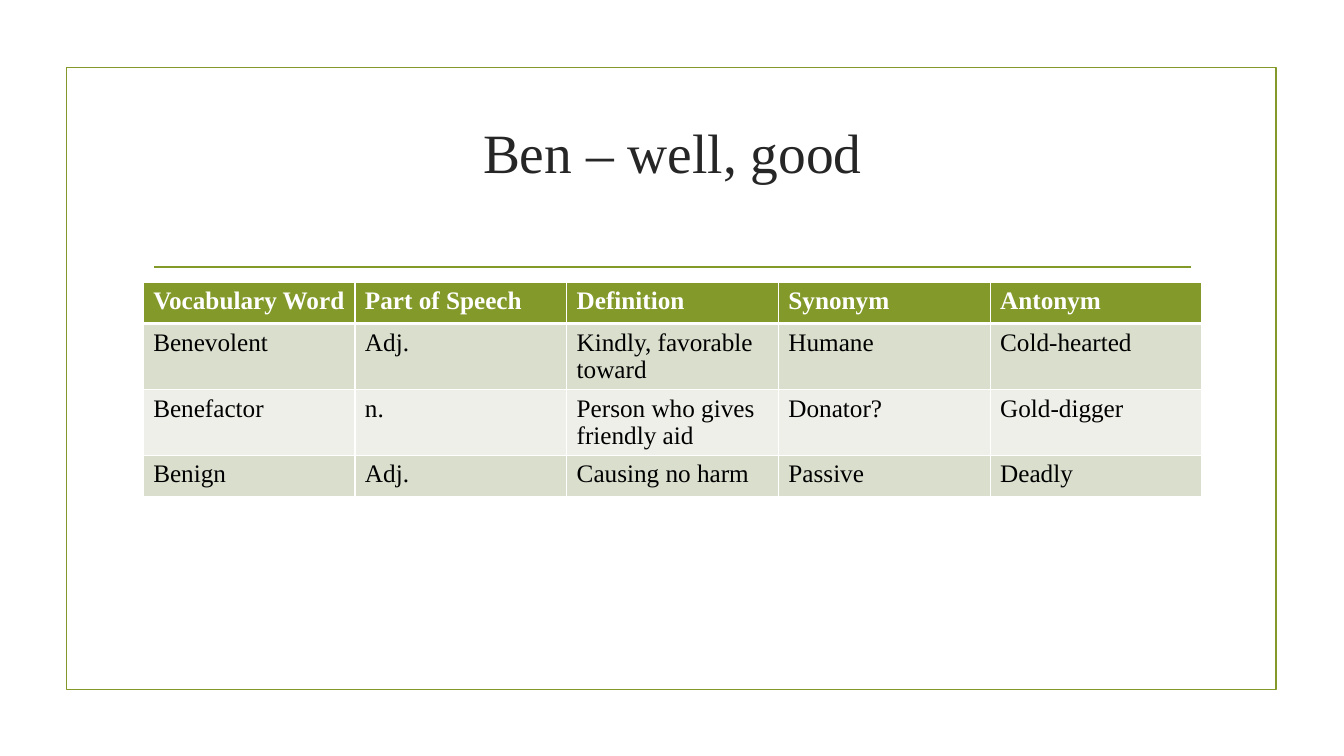
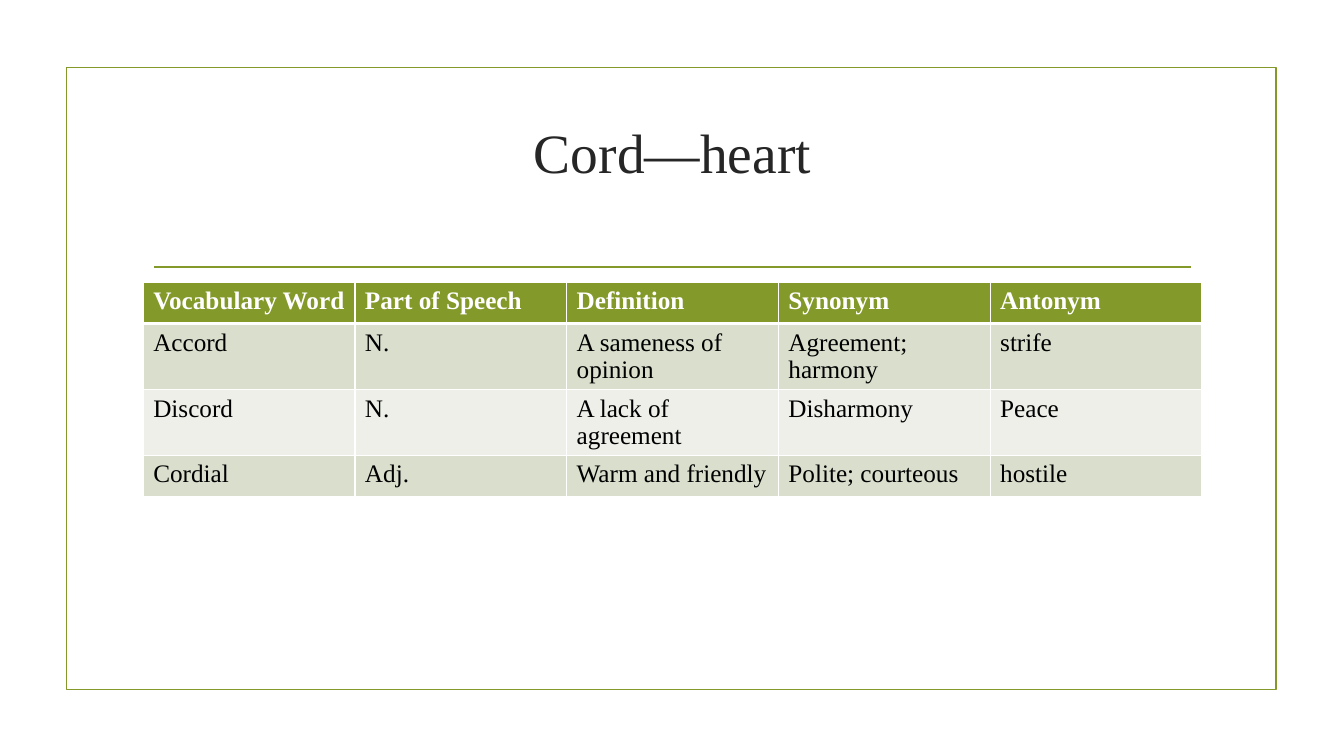
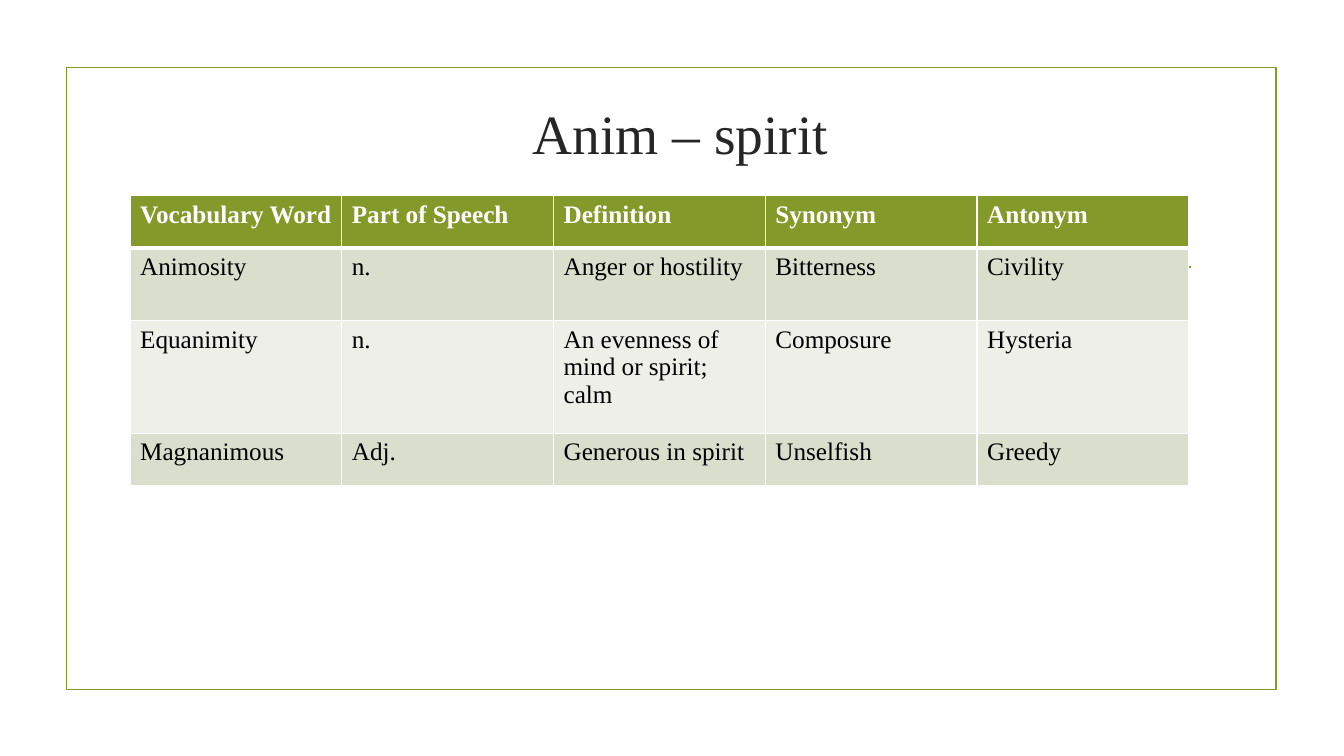
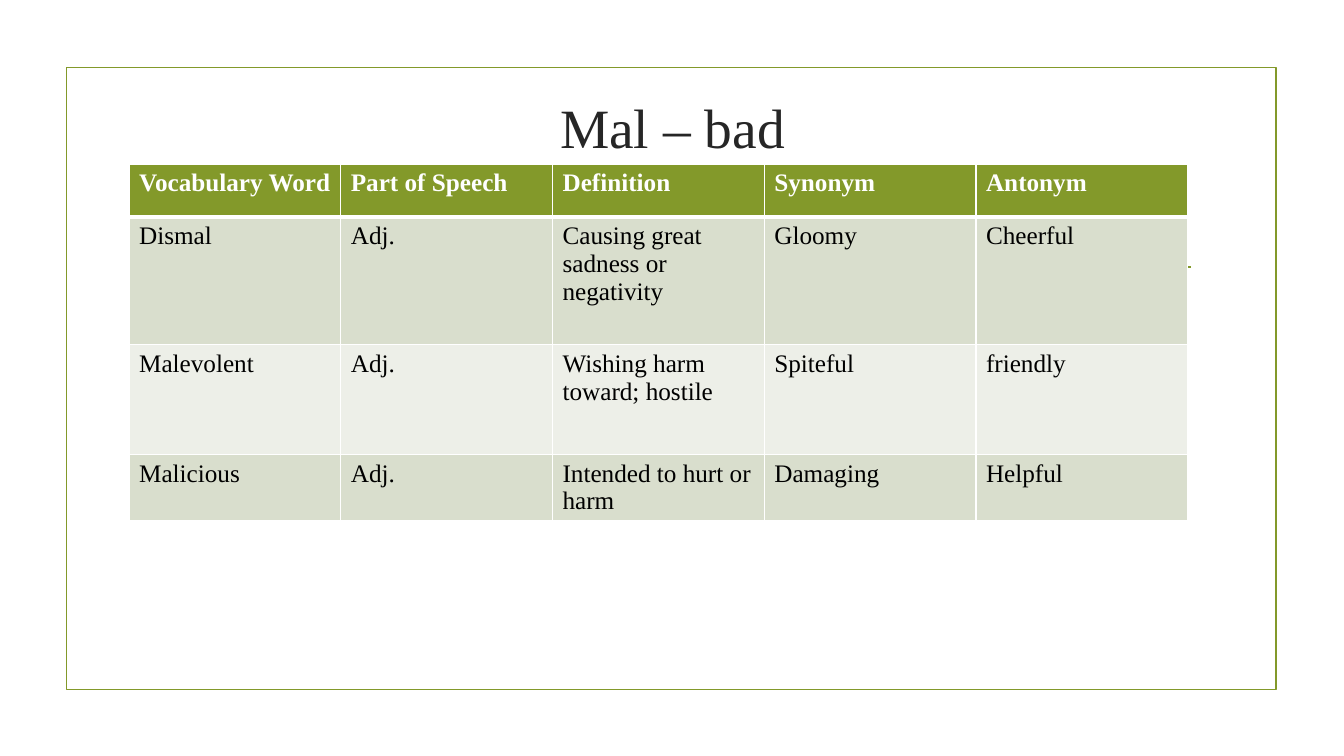
"""Build four vocabulary slides, one for each Latin root."""
import pptx
import pptx.dml.color
import pptx.enum.shapes
import pptx.enum.text
import pptx.oxml
import pptx.oxml.ns
import pptx.util

Inches = pptx.util.Inches
Pt = pptx.util.Pt

FONT = "Times New Roman"
GREEN = "83992A"
WHITE = "FFFFFF"
BLACK = "000000"
TITLE_COLOUR = "262626"
BANDS = ["D9DECD", "EDEFE8"]
COLUMN_WIDTH = 2.1
HEADINGS = ["Vocabulary Word", "Part of Speech", "Definition", "Synonym", "Antonym"]

ROOTS = [
    {
        "title": "Ben – well, good",
        "title_at": (1.42, 1.07, 10.5, 1.43),
        "table_at": (1.42, 2.8),
        "row_heights": [0.41, 0.41, 0.41, 0.41],
        "words": [
            ["Benevolent", "Adj.", "Kindly, favorable toward", "Humane", "Cold-hearted"],
            ["Benefactor", "n.", "Person who gives friendly aid", "Donator?", "Gold-digger"],
            ["Benign", "Adj.", "Causing no harm", "Passive", "Deadly"],
        ],
    },
    {
        "title": "Cord—heart",
        "title_at": (1.42, 1.07, 10.5, 1.43),
        "table_at": (1.42, 2.8),
        "row_heights": [0.41, 0.41, 0.41, 0.41],
        "words": [
            ["Accord", "N.", "A sameness of opinion", "Agreement; harmony", "strife"],
            ["Discord", "N.", "A lack of agreement", "Disharmony", "Peace"],
            ["Cordial", "Adj.", "Warm and friendly", "Polite; courteous", "hostile"],
        ],
    },
    {
        "title": "Anim – spirit",
        "title_at": (2.33, 1.05, 8.84, 1.1),
        "table_at": (1.29, 1.94),
        "row_heights": [0.52, 0.72, 1.12, 0.52],
        "words": [
            ["Animosity", "n.", "Anger or hostility", "Bitterness", "Civility"],
            ["Equanimity", "n.", "An evenness of mind or spirit; calm", "Composure", "Hysteria"],
            ["Magnanimous", "Adj.", "Generous in spirit", "Unselfish", "Greedy"],
        ],
    },
    {
        "title": "Mal – bad",
        "title_at": (1.42, 0.82, 10.5, 1.43),
        "table_at": (1.28, 1.63),
        "row_heights": [0.52, 1.27, 1.09, 0.52],
        "words": [
            ["Dismal", "Adj.", "Causing great sadness or negativity", "Gloomy", "Cheerful"],
            ["Malevolent", "Adj.", "Wishing harm toward; hostile", "Spiteful", "friendly"],
            ["Malicious", "Adj.", "Intended to hurt or harm", "Damaging", "Helpful"],
        ],
    },
]


def paint(colour_format, colour):
    """Set a fill, line or font colour from a hex string."""
    if hasattr(colour_format, "solid"):
        colour_format.solid()
        colour_format = colour_format.fore_color
    colour_format.rgb = pptx.dml.color.RGBColor.from_string(colour)


def write(paragraph, text, size, colour, bold=False):
    """Add one run of text to a paragraph."""
    span = paragraph.add_run()
    span.text = text
    span.font.name = FONT
    span.font.size = Pt(size)
    span.font.bold = bold
    paint(span.font.color, colour)


deck = pptx.Presentation()
deck.slide_width = Inches(13.33)
deck.slide_height = Inches(7.5)

for root in ROOTS:
    page = deck.slides.add_slide(deck.slide_layouts[6])

    frame = page.shapes.add_shape(
        pptx.enum.shapes.MSO_SHAPE.RECTANGLE,
        Inches(0.66), Inches(0.67), Inches(12), Inches(6.17))
    frame.shadow.inherit = False
    frame.fill.background()

    rule = page.shapes.add_connector(
        pptx.enum.shapes.MSO_CONNECTOR.STRAIGHT,
        Inches(1.53), Inches(2.65), Inches(11.81), Inches(2.65))
    properties = rule.element.find(pptx.oxml.ns.qn("p:spPr"))

    for outlined in (frame, rule):
        paint(outlined.line.fill, GREEN)
        outlined.line.width = Pt(1.25)
    pptx.oxml.ns.qn("a:effectLst")
    properties.append(pptx.oxml.parse_xml(
        f'<a:effectLst {pptx.oxml.ns.nsdecls("a")}/>'))

    box = page.shapes.add_textbox(*[Inches(length) for length in root["title_at"]])
    box.text_frame.word_wrap = True
    box.text_frame.auto_size = pptx.enum.text.MSO_AUTO_SIZE.NONE
    box.text_frame.vertical_anchor = pptx.enum.text.MSO_ANCHOR.MIDDLE
    box.text_frame.margin_bottom = Inches(0.62)
    heading = box.text_frame.paragraphs[0]
    heading.alignment = pptx.enum.text.PP_ALIGN.CENTER
    write(heading, root["title"], 39.6, TITLE_COLOUR)

    rows = [HEADINGS] + root["words"]
    left, top = root["table_at"]
    table = page.shapes.add_table(
        len(rows), len(HEADINGS), Inches(left), Inches(top),
        Inches(COLUMN_WIDTH * len(HEADINGS)), Inches(sum(root["row_heights"]))).table
    for column in table.columns:
        column.width = Inches(COLUMN_WIDTH)

    for row_index, texts in enumerate(rows):
        table.rows[row_index].height = Inches(root["row_heights"][row_index])
        is_header = row_index == 0
        fill = GREEN if is_header else BANDS[(row_index - 1) % 2]
        for column_index, text in enumerate(texts):
            cell = table.cell(row_index, column_index)
            write(cell.text_frame.paragraphs[0], text, 18,
                  WHITE if is_header else BLACK, is_header)
            borders = {"lnL": 1, "lnR": 1, "lnT": 1, "lnB": 1}
            if is_header:
                borders["lnB"] = 3
            elif row_index == 1:
                borders["lnT"] = 3
            cell_properties = cell._tc.get_or_add_tcPr()
            for side, width in borders.items():
                cell_properties.append(pptx.oxml.parse_xml(
                    f'<a:{side} {pptx.oxml.ns.nsdecls("a")} w="{Pt(width)}">'
                    f'<a:solidFill><a:srgbClr val="{WHITE}"/></a:solidFill></a:{side}>'))
            paint(cell.fill, fill)

deck.save("out.pptx")
